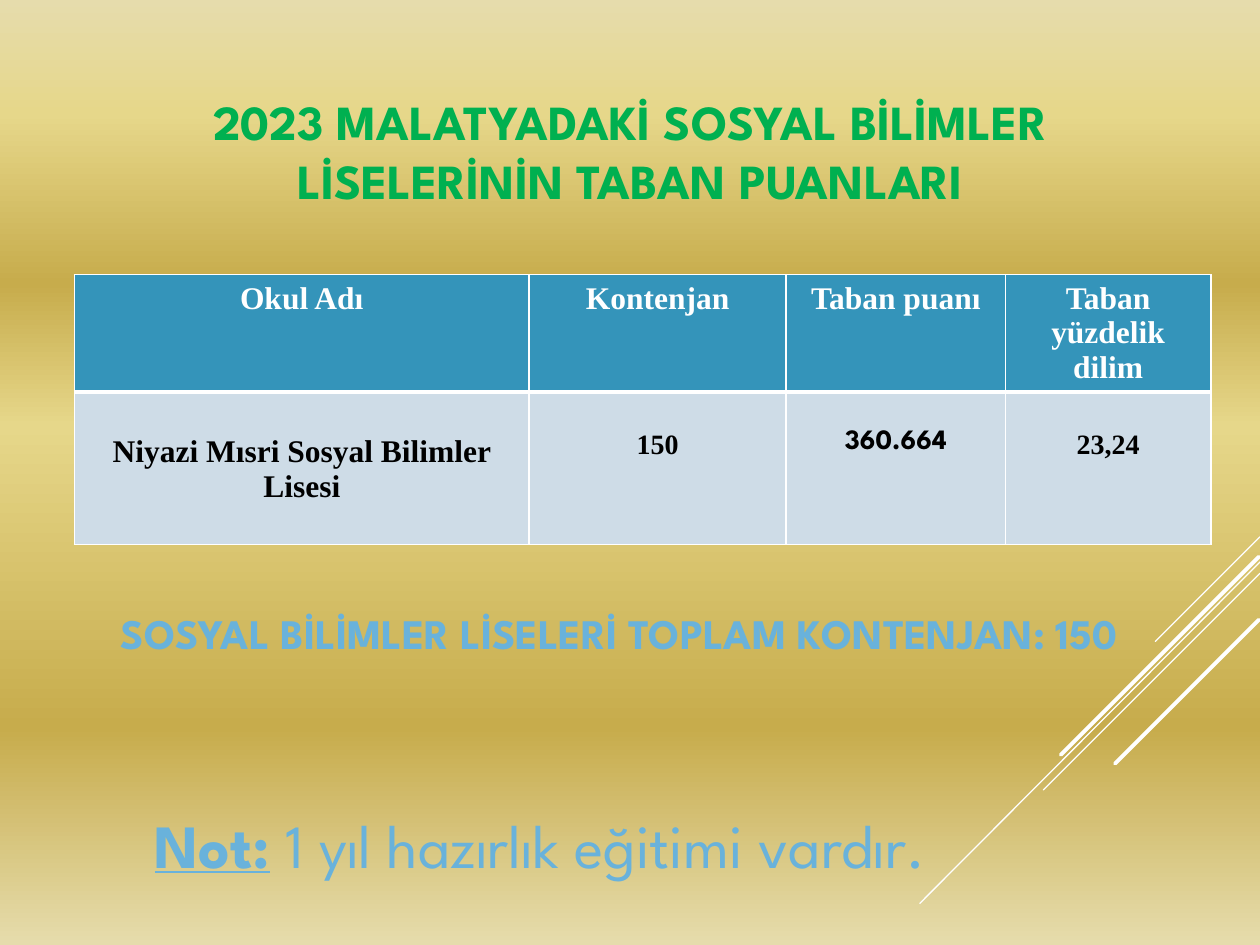
from dataclasses import dataclass

from lxml import etree
from pptx import Presentation
from pptx.dml.color import RGBColor
from pptx.enum.shapes import MSO_CONNECTOR
from pptx.enum.text import MSO_ANCHOR, MSO_AUTO_SIZE, PP_ALIGN
from pptx.oxml.ns import qn
from pptx.util import Inches, Pt

STRAIGHT = MSO_CONNECTOR.STRAIGHT
MIDDLE = MSO_ANCHOR.MIDDLE
NO_AUTOFIT = MSO_AUTO_SIZE.NONE
LEFT, CENTER = PP_ALIGN.LEFT, PP_ALIGN.CENTER
TITLE_ONLY = 5


@dataclass(frozen=True)
class Theme:
    display: str = "League Spartan"
    serif: str = "Times New Roman"
    white: str = "FFFFFF"
    black: str = "000000"
    green: str = "00B050"
    sky: str = "69B2DB"
    header_fill: str = "3494BA"
    body_fill: str = "CEDCE7"
    background: tuple = ((0, "E6DCAC"), (12, "E6D78A"), (30, "C7AC4C"),
                         (45, "E6D78A"), (77, "C7AC4C"), (100, "E6DCAC"))
    title_size: float = 28
    total_size: float = 24
    note_size: float = 35.1
    table_size: float = 18
    value_size: float = 16


THEME = Theme()

DECORATION_LINES = (
    (10, 4.26, 9.17, 5.09, 0.75),
    (10, 4.46, 7.3, 7.17, 0.75),
    (10, 4.55, 8.28, 6.27, 0.75),
    (9.99, 4.42, 8.42, 5.99, 2.25),
    (9.99, 4.92, 8.85, 6.06, 2.25),
)
COLUMN_WIDTHS = (3.61, 2.04, 1.74, 1.63)
ROW_HEIGHTS = (0.92, 1.21)
HEADERS = ("Okul Adı", "Kontenjan", "Taban puanı", "Taban yüzdelik dilim")
SCHOOL = (
    ("Niyazi Mısri Sosyal Bilimler Lisesi", THEME.serif, THEME.table_size, 0.34),
    ("150", THEME.serif, THEME.value_size, 0.3),
    ("360.664", THEME.display, THEME.value_size, 0.3),
    ("23,24", THEME.serif, THEME.value_size, 0.3),
)


def apply_format(target, values):
    for name, value in values.items():
        setattr(target, name, value)


def add_run(paragraph, text, font, size, color, bold=True, underline=False):
    run = paragraph.add_run()
    run.text = text
    apply_format(run.font, {"name": font, "size": Pt(size),
                            "bold": bold, "underline": underline})
    run.font.color.rgb = RGBColor.from_string(color)


def paint_background(slide):
    fill = slide.background.fill
    fill.gradient()
    fill.gradient_angle = 270
    stops = slide.element.xpath(".//p:bg//a:gsLst")[0]
    for stop in list(stops):
        stops.remove(stop)
    for position, color in THEME.background:
        stop = etree.SubElement(stops, qn("a:gs"), pos=str(position * 1000))
        etree.SubElement(stop, qn("a:srgbClr"), val=color)


def add_decoration_line(slide, left, top, right, bottom, width):
    points = [Inches(value) for value in (left, top, right, bottom)]
    connector = slide.shapes.add_connector(STRAIGHT, *points)
    connector.line.color.rgb = RGBColor.from_string(THEME.white)
    connector.line.width = Pt(width)
    connector.element.xpath(".//a:ln")[0].set("cap", "rnd")
    etree.SubElement(connector.element.spPr, qn("a:effectLst"))


def prepare_frame(shape):
    frame = shape.text_frame
    apply_format(frame, {"word_wrap": True, "auto_size": NO_AUTOFIT,
                         "vertical_anchor": MIDDLE})
    return frame.paragraphs[0]


def fill_title(slide, text):
    title = slide.shapes.title
    apply_format(title, {"left": Inches(0.5), "top": Inches(0.77),
                         "width": Inches(9), "height": Inches(0.85)})
    paragraph = prepare_frame(title)
    paragraph.alignment = CENTER
    add_run(paragraph, text, THEME.display, THEME.title_size, THEME.green)


def add_text(slide, box, alignment, margin, indent, size, runs):
    shape = slide.shapes.add_textbox(*[Inches(value) for value in box])
    paragraph = prepare_frame(shape)
    paragraph.alignment = alignment
    properties = paragraph._p.get_or_add_pPr()
    properties.set("marL", str(Inches(margin)))
    properties.set("indent", str(Inches(indent)))
    for text, bold, underline in runs:
        add_run(paragraph, text, THEME.display, size, THEME.sky, bold, underline)


def set_borders(cell, widths):
    properties = cell._tc.get_or_add_tcPr()
    for side, width in zip("LRTB", widths):
        line = etree.SubElement(properties, qn(f"a:ln{side}"), w=str(Pt(width)))
        solid = etree.SubElement(line, qn("a:solidFill"))
        etree.SubElement(solid, qn("a:srgbClr"), val=THEME.white)


def fill_cell(cell, text, font, size, color, fill, borders, top_margin=0.05):
    set_borders(cell, borders)
    cell.fill.solid()
    cell.fill.fore_color.rgb = RGBColor.from_string(fill)
    cell.margin_top = Inches(top_margin)
    paragraph = cell.text_frame.paragraphs[0]
    paragraph.alignment = CENTER
    add_run(paragraph, text, font, size, color)


def add_score_table(slide):
    frame = slide.shapes.add_table(
        len(ROW_HEIGHTS), len(COLUMN_WIDTHS), Inches(0.59), Inches(2.18),
        Inches(sum(COLUMN_WIDTHS)), Inches(sum(ROW_HEIGHTS)))
    table = frame.table
    table.horz_banding = False
    for column, width in zip(table.columns, COLUMN_WIDTHS):
        column.width = Inches(width)
    for row, height in zip(table.rows, ROW_HEIGHTS):
        row.height = Inches(height)
    for index, header in enumerate(HEADERS):
        fill_cell(table.cell(0, index), header, THEME.serif, THEME.table_size,
                  THEME.white, THEME.header_fill, (1, 1, 1, 3))
    for index, (text, font, size, top_margin) in enumerate(SCHOOL):
        fill_cell(table.cell(1, index), text, font, size, THEME.black,
                  THEME.body_fill, (1, 1, 3, 1), top_margin)


def main():
    presentation = Presentation()
    presentation.slide_width = Inches(10)
    presentation.slide_height = Inches(7.5)
    slide = presentation.slides.add_slide(presentation.slide_layouts[TITLE_ONLY])
    paint_background(slide)
    for line in DECORATION_LINES:
        add_decoration_line(slide, *line)
    fill_title(slide, "2023 MALATYADAKİ SOSYAL BİLİMLER LİSELERİNİN TABAN PUANLARI")
    add_score_table(slide)
    add_text(slide, (0.6, 6.27, 9, 0.85), LEFT, 0.19, 0.34, THEME.note_size,
             (("Not:", True, True),
              (" 1 yıl hazırlık eğitimi vardır.", False, False)))
    add_text(slide, (0, 4.67, 9.3, 0.7), CENTER, 0.53, 0, THEME.total_size,
             (("SOSYAL BİLİMLER LİSELERİ TOPLAM KONTENJAN: 150", True, False),))
    presentation.save("out.pptx")


if __name__ == "__main__":
    main()
